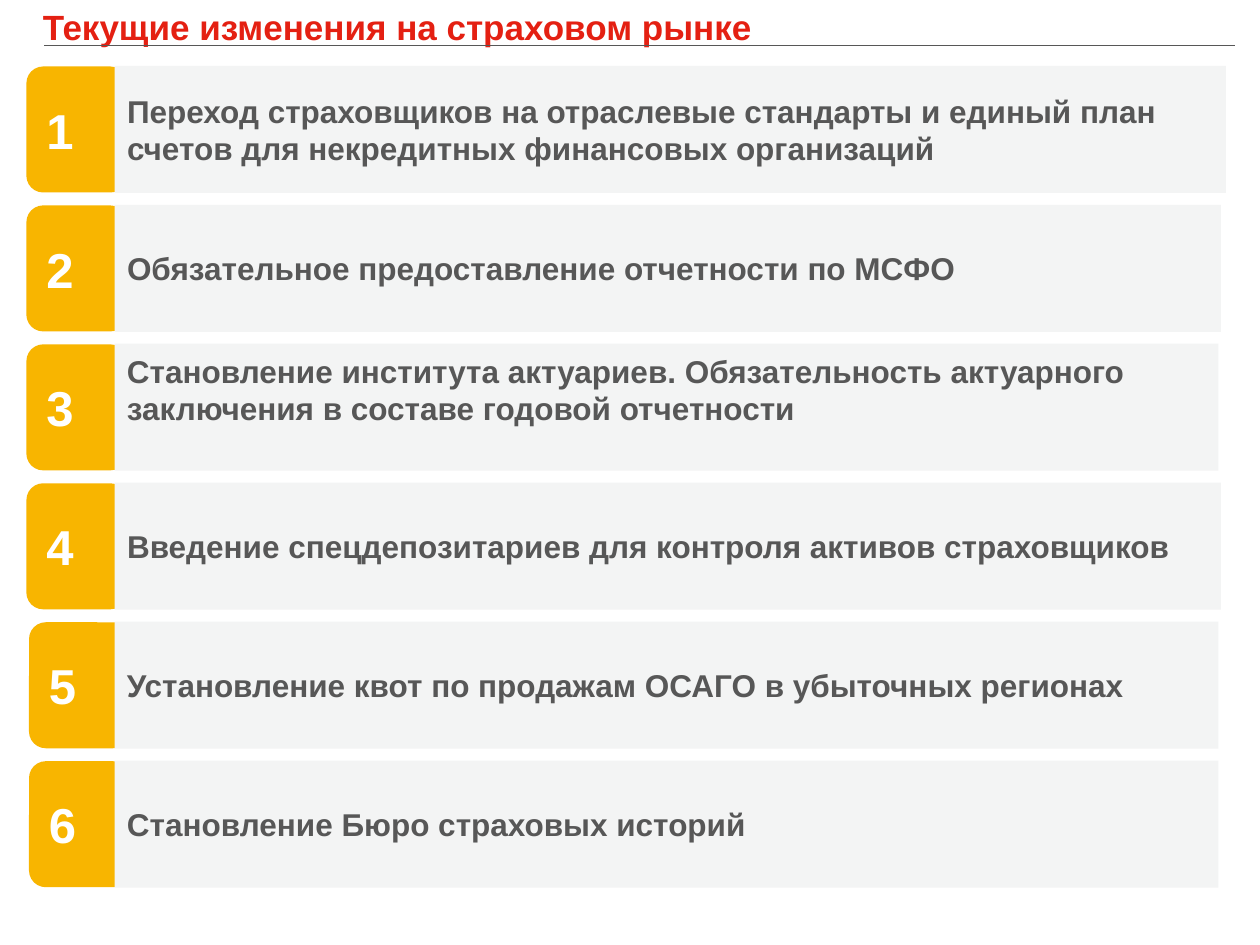
from lxml import etree
from pptx import Presentation
from pptx.dml.color import RGBColor
from pptx.enum.shapes import MSO_CONNECTOR, MSO_SHAPE
from pptx.enum.text import MSO_ANCHOR, MSO_AUTO_SIZE, PP_ALIGN
from pptx.oxml.ns import qn
from pptx.util import Pt

RECT, ROUNDED = MSO_SHAPE.RECTANGLE, MSO_SHAPE.ROUNDED_RECTANGLE
STRAIGHT = MSO_CONNECTOR.STRAIGHT
TOP, MIDDLE = MSO_ANCHOR.TOP, MSO_ANCHOR.MIDDLE
NO_FIT, LEFT = MSO_AUTO_SIZE.NONE, PP_ALIGN.LEFT

RED = RGBColor(0xE4, 0x20, 0x12)
AMBER = RGBColor(0xF8, 0xB5, 0x00)
PALE = RGBColor(0xF3, 0xF4, 0xF4)
GRAY = RGBColor(0x57, 0x57, 0x57)
WHITE = RGBColor(0xFF, 0xFF, 0xFF)

FIRST_TOP, PITCH = 37.6, 79.4
BAR_LEFT, BAR_HEIGHT = 65.5, 72.6
TAB_WIDTH, TAB_HEIGHT = 57.6, 72

# (text, tab left, bar width, bottom inset)
ROWS = [
    ("Переход страховщиков на отраслевые стандарты и единый план счетов "
     "для некредитных финансовых организаций", 15.1, 635, 3.6),
    ("Обязательное предоставление отчетности по МСФО", 15.1, 632.2, 3.6),
    ("Становление института актуариев. Обязательность актуарного "
     "заключения в составе годовой отчетности", 15.1, 630.7, 24),
    ("Введение спецдепозитариев для контроля активов страховщиков", 15.1, 632.2, 3.6),
    ("Установление квот по продажам ОСАГО в убыточных регионах", 16.6, 630.7, 3.6),
    ("Становление Бюро страховых историй", 16.6, 630.7, 3.6),
]


class Deck:
    """Holds the font and the current slide, and adds its elements."""

    def __init__(self, slide, font="Arial"):
        self.slide = slide
        self.font = font

    def set_text(self, sp, text, size, color, anchor):
        tf = sp.text_frame
        tf.word_wrap = True
        tf.auto_size = NO_FIT
        tf.vertical_anchor = anchor
        p = tf.paragraphs[0]
        p.text = text
        p.alignment = LEFT
        p.font.name, p.font.size, p.font.bold = self.font, Pt(size), True
        p.font.color.rgb = color
        return tf

    def title(self, text, x, y, w, h):
        sp = self.slide.shapes.title
        sp.left, sp.top, sp.width, sp.height = Pt(x), Pt(y), Pt(w), Pt(h)
        self.set_text(sp, text, 20, RED, TOP)

    def rule(self, x1, x2, y):
        line = self.slide.shapes.add_connector(STRAIGHT, Pt(x1), Pt(y), Pt(x2), Pt(y))
        line.line.color.rgb = GRAY
        line.line.width = Pt(0.75)
        etree.SubElement(line._element.spPr, qn("a:effectLst"))

    def block(self, kind, x, y, w, h, fill, text, size, color):
        sp = self.slide.shapes.add_shape(kind, Pt(x), Pt(y), Pt(w), Pt(h))
        sp.shadow.inherit = False
        sp.fill.solid()
        sp.fill.fore_color.rgb = fill
        sp.line.fill.background()
        return self.set_text(sp, text, size, color, MIDDLE)

    def tab(self, number, x, y):
        tf = self.block(ROUNDED, x, y, TAB_WIDTH, TAB_HEIGHT, AMBER, str(number), 28, WHITE)
        tf.margin_left = Pt(8.6)

    def bar(self, text, y, w, bottom):
        tf = self.block(RECT, BAR_LEFT, y, w, BAR_HEIGHT, PALE, text, 18, GRAY)
        tf.margin_bottom = Pt(bottom)


def main():
    prs = Presentation()
    prs.slide_width, prs.slide_height = Pt(720), Pt(540)
    deck = Deck(prs.slides.add_slide(prs.slide_layouts[5]))
    deck.title("Текущие изменения на страховом рынке", 17.3, -0.7, 614.9, 55.4)
    deck.rule(25.2, 705.6, 25.9)
    for i, (text, tab_left, width, bottom) in enumerate(ROWS):
        y = FIRST_TOP + i * PITCH
        deck.tab(i + 1, tab_left, y + 0.4)
        deck.bar(text, y, width, bottom)
    prs.save("out.pptx")


if __name__ == "__main__":
    main()
